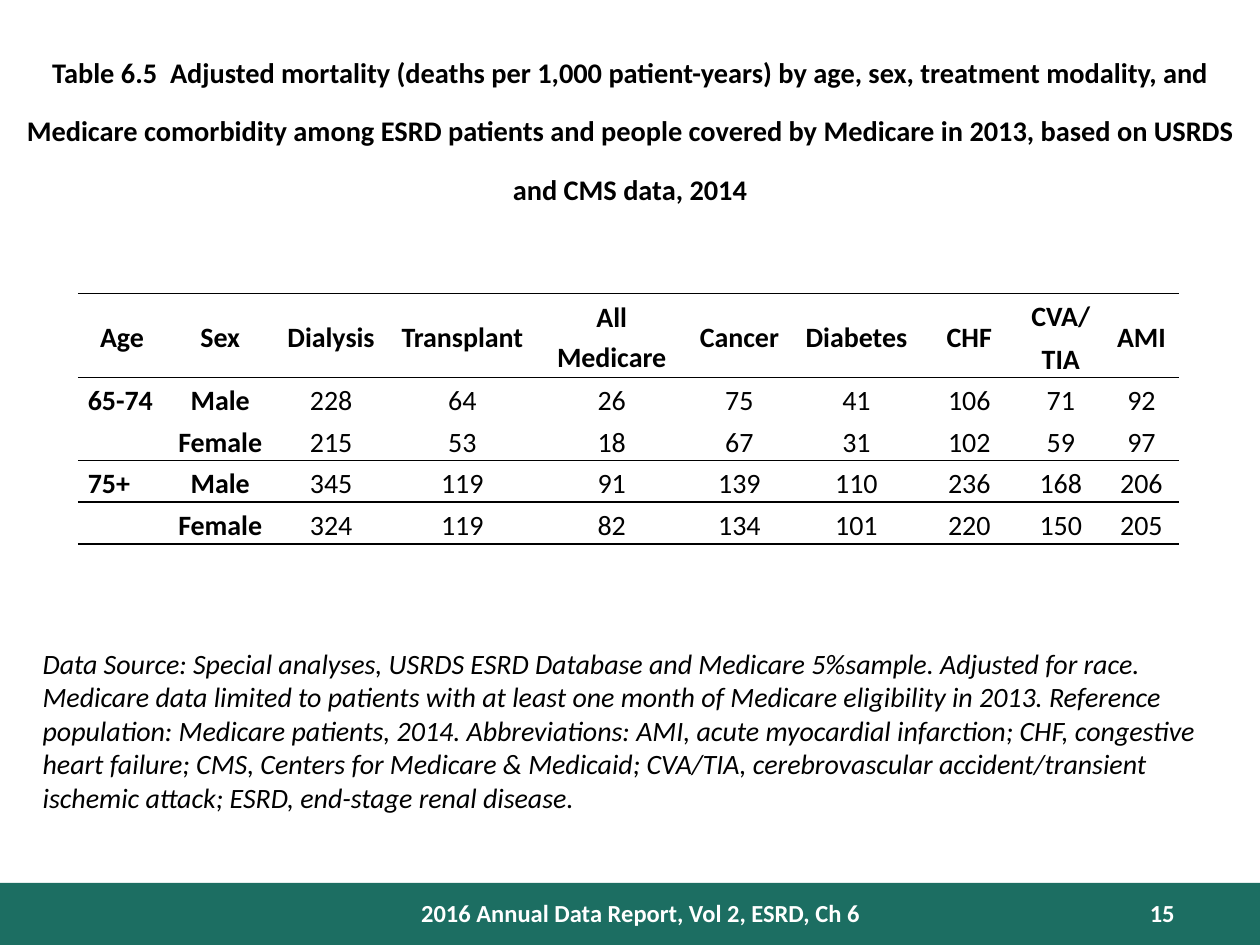
from dataclasses import dataclass

from lxml.etree import SubElement
from pptx import Presentation
from pptx.dml.color import RGBColor
from pptx.enum.shapes import MSO_SHAPE
from pptx.enum.text import MSO_ANCHOR, PP_ALIGN
from pptx.oxml.ns import qn
from pptx.util import Cm, Pt


@dataclass(frozen=True)
class Theme:
    font: str = "Calibri"
    ink: RGBColor = RGBColor(0, 0, 0)
    paper: RGBColor = RGBColor(255, 255, 255)
    band: RGBColor = RGBColor(0x1C, 0x6E, 0x62)
    title: int = 28
    body: int = 16
    footer: int = 14
    rule: int = 1


THEME = Theme()
PLAIN_TABLE_STYLE = "{2D5ABB26-0587-4C30-8999-92F81FD0307C}"

TITLE = (
    "Table 6.5  Adjusted mortality (deaths per 1,000 patient-years) by age, sex, "
    "treatment modality, and Medicare comorbidity among ESRD patients and people "
    "covered by Medicare in 2013, based on USRDS and CMS data, 2014"
)
DATA_SOURCE = (
    "Data Source: Special analyses, USRDS ESRD Database and Medicare 5%sample. "
    "Adjusted for race. Medicare data limited to patients with at least one month of "
    "Medicare eligibility in 2013. Reference population: Medicare patients, 2014. "
    "Abbreviations: AMI, acute myocardial infarction; CHF, congestive heart failure; "
    "CMS, Centers for Medicare & Medicaid; CVA/TIA, cerebrovascular accident/transient "
    "ischemic attack; ESRD, end-stage renal disease."
)
HEADINGS = ["Age", "Sex", "Dialysis", "Transplant", "All Medicare", "Cancer",
            "Diabetes", "CHF", "CVA/\nTIA", "AMI"]
MORTALITY = [
    ["65-74", "Male", 228, 64, 26, 75, 41, 106, 71, 92],
    ["", "Female", 215, 53, 18, 67, 31, 102, 59, 97],
    ["75+", "Male", 345, 119, 91, 139, 110, 236, 168, 206],
    ["", "Female", 324, 119, 82, 134, 101, 220, 150, 205],
]
COLUMN_WIDTHS = [1.78, 2.18, 2.29, 3.0, 3.02, 2.13, 2.59, 1.96, 1.73, 1.52]
RULED_ROWS = {0, 2, 3, 4}


def style_font(font, size, color, bold=False, italic=False):
    font.name = THEME.font
    font.size = Pt(size)
    font.color.rgb = color
    font.bold = bold
    font.italic = italic


def add_text(slide, box, text, size, color, align=PP_ALIGN.LEFT, **emphasis):
    frame = slide.shapes.add_textbox(*map(Cm, box)).text_frame
    frame.word_wrap = True
    paragraph = frame.paragraphs[0]
    paragraph.text = text
    paragraph.alignment = align
    style_font(paragraph.font, size, color, **emphasis)
    return paragraph


def add_title(slide, box):
    paragraph = add_text(slide, box, TITLE, THEME.title, THEME.ink,
                         PP_ALIGN.CENTER, bold=True)
    paragraph.runs[0]._r.get_or_add_rPr().set("baseline", "30000")


def add_rule(cell, side):
    line = SubElement(cell._tc.get_or_add_tcPr(), qn(f"a:{side}"),
                      w=str(Pt(THEME.rule)))
    fill = SubElement(line, qn("a:solidFill"))
    SubElement(fill, qn("a:srgbClr"), val=str(THEME.ink))


def fill_cell(cell, value, row, column):
    is_heading = row == 0
    is_label = is_heading or column < 2
    cell.margin_left = cell.margin_right = Cm(0.2)
    cell.margin_top = cell.margin_bottom = Cm(0.03)
    cell.vertical_anchor = MSO_ANCHOR.MIDDLE if is_label else MSO_ANCHOR.BOTTOM
    cell.text = str(value)
    for paragraph in cell.text_frame.paragraphs:
        paragraph.alignment = (PP_ALIGN.CENTER if is_heading or column
                               else PP_ALIGN.LEFT)
        paragraph.line_spacing = 1.15
        if is_heading:
            paragraph.space_before = paragraph.space_after = Pt(1)
        style_font(paragraph.font, THEME.body, THEME.ink, bold=is_label)
    if is_heading:
        add_rule(cell, "lnT")
    if row in RULED_ROWS:
        add_rule(cell, "lnB")
    cell.fill.background()


def add_mortality_table(slide, box):
    rows = [HEADINGS, *MORTALITY]
    left, top, width, height = map(Cm, box)
    frame = slide.shapes.add_table(len(rows), len(HEADINGS), left, top, width, height)
    table = frame.table
    table.first_row = table.horz_banding = False
    table._tbl.tblPr.find(qn("a:tableStyleId")).text = PLAIN_TABLE_STYLE
    for column, column_width in zip(table.columns, COLUMN_WIDTHS):
        column.width = Cm(column_width)
    row_height = height // (len(rows) + 1)
    for row, values in enumerate(rows):
        table.rows[row].height = row_height if row else 2 * row_height
        for column, value in enumerate(values):
            fill_cell(table.cell(row, column), value, row, column)


def add_footer(slide, box):
    left, top, width, height = box
    band = slide.shapes.add_shape(MSO_SHAPE.RECTANGLE, *map(Cm, box))
    band.shadow.inherit = False
    band.fill.solid()
    band.fill.fore_color.rgb = THEME.band
    band.line.fill.background()
    text_top = top + 0.18
    add_text(slide, (left + 8.05, text_top, 9.73, 0.84),
             "2016 Annual Data Report, Vol 2, ESRD, Ch 6",
             THEME.footer, THEME.paper, PP_ALIGN.CENTER, bold=True)
    add_text(slide, (left + width - 4.01, text_top, 2.54, 0.76), "15",
             THEME.footer, THEME.paper, PP_ALIGN.RIGHT, bold=True)


def main():
    presentation = Presentation()
    presentation.slide_width = Cm(25.4)
    presentation.slide_height = Cm(19.05)
    slide = presentation.slides.add_slide(presentation.slide_layouts[6])
    add_footer(slide, (0, 17.8, 25.4, 1.25))
    add_title(slide, (0, 0.86, 25.4, 2.64))
    add_text(slide, (0.61, 12.9, 24.15, 3.68), DATA_SOURCE,
             THEME.body, THEME.ink, italic=True)
    add_mortality_table(slide, (1.57, 5.92, 22.2, 4.98))
    presentation.save("out.pptx")


if __name__ == "__main__":
    main()
